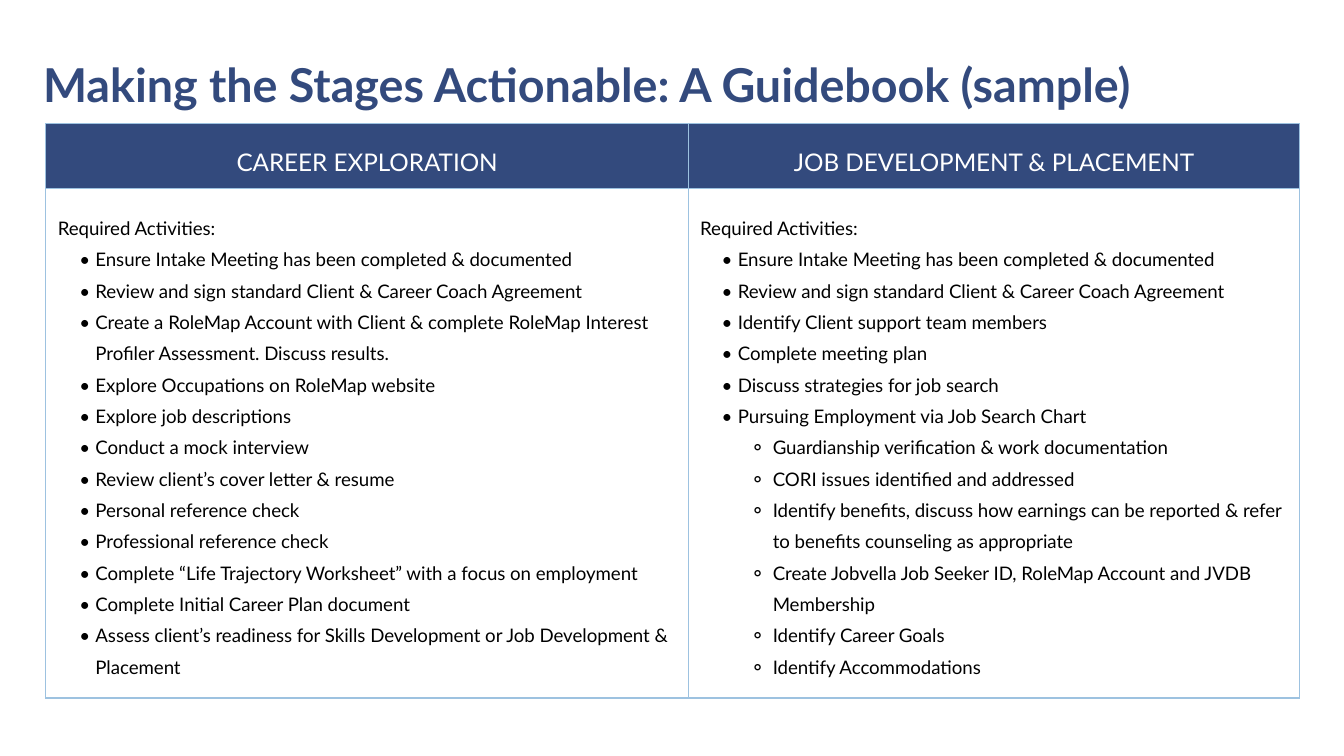
from lxml.etree import SubElement
from pptx import Presentation
from pptx.dml.color import RGBColor
from pptx.enum.text import MSO_ANCHOR, MSO_AUTO_SIZE, PP_ALIGN
from pptx.oxml.ns import qn
from pptx.util import Inches, Pt

COLORS = {"navy": "334A7D", "white": "FFFFFF", "black": "000000", "border": "9DC2E0"}
FONT = "Lato"
BULLETS = {1: ("•", 0.28, -0.12), 2: ("⚬", 0.54, -0.17)}
COLUMN_WIDTHS = (4.78, 4.55)
ROW_HEIGHTS = (0.48, 3.79)

COMMON_ACTIVITIES = [
    (0, "Required Activities:"),
    (1, "Ensure Intake Meeting has been completed & documented"),
    (1, "Review and sign standard Client & Career Coach Agreement"),
]
STAGES = {
    "CAREER EXPLORATION": COMMON_ACTIVITIES + [
        (1, "Create a RoleMap Account with Client & complete RoleMap Interest "
            "Profiler Assessment. Discuss results."),
        (1, "Explore Occupations on RoleMap website"),
        (1, "Explore job descriptions"),
        (1, "Conduct a mock interview"),
        (1, "Review client’s cover letter & resume"),
        (1, "Personal reference check"),
        (1, "Professional reference check"),
        (1, "Complete “Life Trajectory Worksheet” with a focus on employment"),
        (1, "Complete Initial Career Plan document"),
        (1, "Assess client’s readiness for Skills Development or Job Development & Placement"),
    ],
    "JOB DEVELOPMENT & PLACEMENT": COMMON_ACTIVITIES + [
        (1, "Identify Client support team members"),
        (1, "Complete meeting plan"),
        (1, "Discuss strategies for job search"),
        (1, "Pursuing Employment via Job Search Chart"),
        (2, "Guardianship verification & work documentation"),
        (2, "CORI issues identified and addressed"),
        (2, "Identify benefits, discuss how earnings can be reported & refer "
            "to benefits counseling as appropriate"),
        (2, "Create Jobvella Job Seeker ID, RoleMap Account and JVDB Membership"),
        (2, "Identify Career Goals"),
        (2, "Identify Accommodations"),
    ],
}


def color(name):
    return RGBColor.from_string(COLORS[name])


def add_run(paragraph, text, size, color_name, bold=False):
    run = paragraph.add_run()
    run.text = text
    run.font.name = FONT
    run.font.size = Pt(size)
    run.font.bold = bold
    run.font.color.rgb = color(color_name)


def add_bullet(paragraph, level):
    character, margin, indent = BULLETS[level]
    paragraph.level = level
    properties = paragraph._p.get_or_add_pPr()
    properties.set("marL", str(Inches(margin)))
    properties.set("indent", str(Inches(indent)))
    bullet_color = SubElement(properties, qn("a:buClr"))
    SubElement(bullet_color, qn("a:srgbClr"), val=COLORS["black"])
    SubElement(properties, qn("a:buFont"), typeface=FONT)
    SubElement(properties, qn("a:buChar"), char=character)


def add_title(slide, text):
    title = slide.shapes.title
    title.left, title.top = Inches(0.32), Inches(0.36)
    title.width, title.height = Inches(8.43), Inches(0.41)
    frame = title.text_frame
    frame.margin_left = frame.margin_right = frame.margin_top = frame.margin_bottom = 0
    frame.vertical_anchor = MSO_ANCHOR.TOP
    frame.auto_size = MSO_AUTO_SIZE.SHAPE_TO_FIT_TEXT
    frame.word_wrap = True
    paragraph = frame.paragraphs[0]
    paragraph.alignment = PP_ALIGN.LEFT
    paragraph.line_spacing = 1.14
    add_run(paragraph, text, 25, "navy", bold=True)


def format_cell(cell, fill_name):
    properties = cell._tc.get_or_add_tcPr()
    for side in ("lnL", "lnR", "lnT", "lnB"):
        border = SubElement(properties, qn(f"a:{side}"), w=str(Pt(0.75)))
        border_fill = SubElement(border, qn("a:solidFill"))
        SubElement(border_fill, qn("a:srgbClr"), val=COLORS["border"])
    cell.fill.solid()
    cell.fill.fore_color.rgb = color(fill_name)
    cell.vertical_anchor = MSO_ANCHOR.MIDDLE
    cell.margin_left = cell.margin_right = Inches(0.09)
    cell.margin_top = cell.margin_bottom = Inches(0.09)


def fill_header(cell, text):
    format_cell(cell, "navy")
    paragraph = cell.text_frame.paragraphs[0]
    paragraph.alignment = PP_ALIGN.CENTER
    paragraph.line_spacing = 1.4
    add_run(paragraph, text, 13, "white")


def fill_activities(cell, activities):
    format_cell(cell, "white")
    frame = cell.text_frame
    for index, (level, text) in enumerate(activities):
        paragraph = frame.add_paragraph() if index else frame.paragraphs[0]
        if level:
            add_bullet(paragraph, level)
        paragraph.alignment = PP_ALIGN.LEFT
        paragraph.line_spacing = 1.4
        add_run(paragraph, text, 10, "black")


def add_stage_table(slide):
    frame = slide.shapes.add_table(
        len(ROW_HEIGHTS), len(COLUMN_WIDTHS), Inches(0.34), Inches(0.92),
        Inches(sum(COLUMN_WIDTHS)), Inches(sum(ROW_HEIGHTS)))
    table = frame.table
    table.first_row = False
    table.horz_banding = False
    for row, height in zip(table.rows, ROW_HEIGHTS):
        row.height = Inches(height)
    for index, (heading, activities) in enumerate(STAGES.items()):
        table.columns[index].width = Inches(COLUMN_WIDTHS[index])
        fill_header(table.cell(0, index), heading)
        fill_activities(table.cell(1, index), activities)


def main():
    presentation = Presentation()
    presentation.slide_width = Inches(10)
    presentation.slide_height = Inches(10 * 9 / 16)
    slide = presentation.slides.add_slide(presentation.slide_layouts[5])
    add_title(slide, "Making the Stages Actionable: A Guidebook (sample)")
    add_stage_table(slide)
    presentation.save("out.pptx")


if __name__ == "__main__":
    main()
